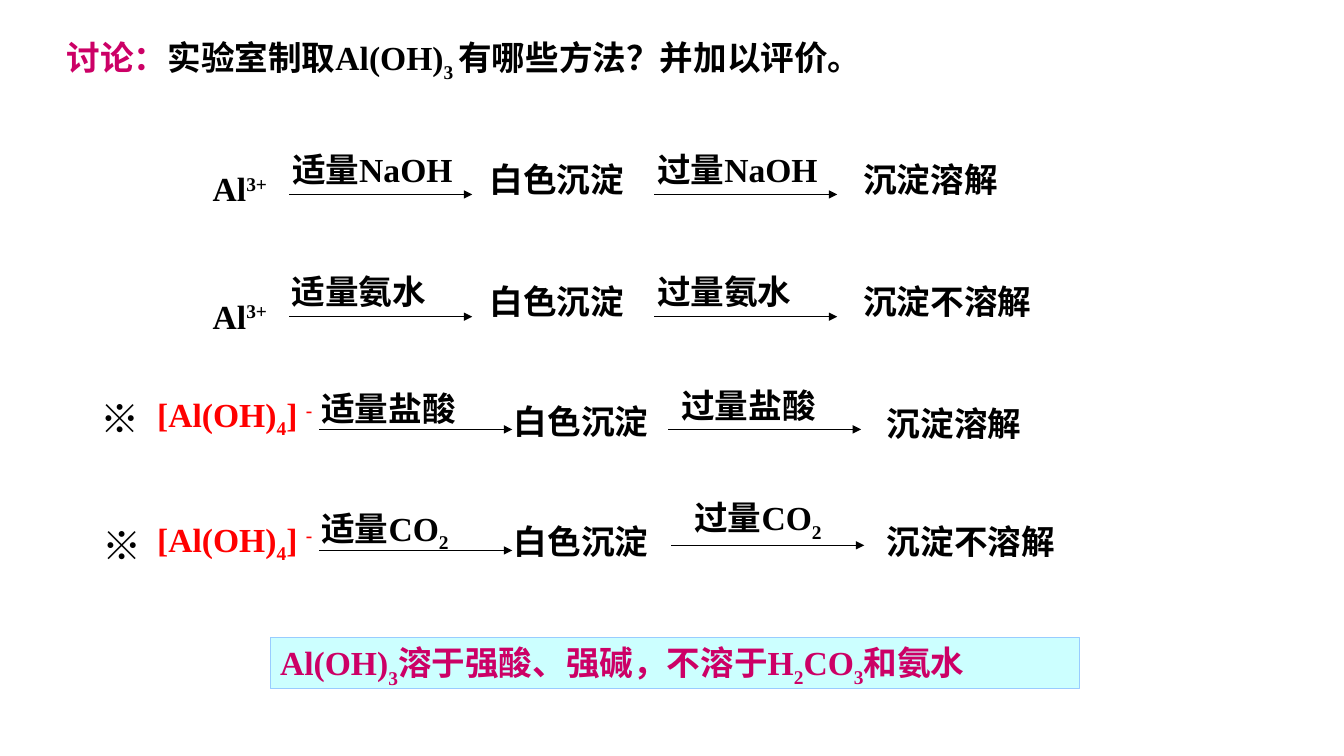
from dataclasses import dataclass
from typing import NamedTuple

from lxml import etree
from pptx import Presentation
from pptx.dml.color import RGBColor
from pptx.enum.shapes import MSO_CONNECTOR, MSO_SHAPE
from pptx.enum.text import MSO_ANCHOR, MSO_AUTO_SIZE, PP_ALIGN
from pptx.oxml.ns import qn
from pptx.util import Cm, Pt

STRAIGHT = MSO_CONNECTOR.STRAIGHT
RECTANGLE = MSO_SHAPE.RECTANGLE
LEFT = PP_ALIGN.LEFT
TOP = MSO_ANCHOR.TOP
NO_AUTOFIT = MSO_AUTO_SIZE.NONE


@dataclass(frozen=True)
class Theme:
    black: RGBColor = RGBColor(0, 0, 0)
    white: RGBColor = RGBColor(255, 255, 255)
    red: RGBColor = RGBColor(255, 0, 0)
    magenta: RGBColor = RGBColor(0xCC, 0, 0x66)
    pale_cyan: RGBColor = RGBColor(0xCC, 255, 255)
    sky: RGBColor = RGBColor(0x99, 0xCC, 255)
    latin: str = "Times New Roman"
    chinese: str = "Noto Sans CJK SC"
    body: Pt = Pt(24)
    mark: Pt = Pt(28)
    line: Pt = Pt(0.75)


THEME = Theme()


class Span(NamedTuple):
    text: str
    baseline: int = 0  # percent of the type size
    color: RGBColor = THEME.black


class Place(NamedTuple):
    """Left, top, width and height in centimetres."""
    left: float
    top: float
    width: float
    height: float = 1.27


@dataclass(frozen=True)
class Columns:
    """Horizontal measures shared by the reactions of one starting ion."""
    ion: list[Span]
    ion_x: float
    ion_width: float
    agent_width: float
    arrow_length: float
    middle_x: float
    middle_width: float
    result_x: float
    result_width: float


class Step(NamedTuple):
    agent: list[Span]
    agent_x: float
    agent_y: float
    arrow_x: float
    arrow_y: float


@dataclass(frozen=True)
class Reaction:
    columns: Columns
    ion_y: float
    steps: list[Step]
    middle_y: float
    result: str
    result_y: float


ALUMINIUM = Columns([Span("Al"), Span("3+", 30)],
                    5.11, 8.4, 6.6, 4.61, 12.09, 4.8, 21.51, 6.2)
ALUMINATE = Columns([Span("[Al(OH)", 0, THEME.red), Span("4", -25, THEME.red),
                     Span("] ", 0, THEME.red), Span("-", 30, THEME.red)],
                    3.71, 8.86, 6.96, 4.86, 12.7, 5.08, 22.1, 6.55)

REACTIONS = [
    Reaction(ALUMINIUM, 4.11, [
        Step([Span("适量NaOH")], 7.11, 3.63, 7.29, 4.9),
        Step([Span("过量NaOH")], 16.31, 3.63, 16.49, 4.9),
    ], 3.89, "沉淀溶解", 3.89),
    Reaction(ALUMINIUM, 7.32, [
        Step([Span("适量氨水")], 7.1, 6.71, 7.29, 7.98),
        Step([Span("过量氨水")], 16.31, 6.71, 16.49, 7.98),
    ], 6.96, "沉淀不溶解", 6.96),
    Reaction(ALUMINATE, 9.8, [
        Step([Span("适量盐酸")], 7.85, 9.65, 8.05, 10.82),
        Step([Span("过量盐酸")], 16.92, 9.58, 16.84, 10.82),
    ], 9.98, "沉淀溶解", 10.03),
    Reaction(ALUMINATE, 12.95, [
        Step([Span("适量CO"), Span("2", -25)], 7.85, 12.67, 8.05, 13.87),
        Step([Span("过量CO"), Span("2", -25)], 17.25, 12.4, 16.92, 13.74),
    ], 13.0, "沉淀不溶解", 13.0),
]

TITLE = [Span("讨论：", 0, THEME.magenta), Span("实验室制取Al(OH)"),
         Span("3 ", -25), Span("有哪些方法？并加以评价。")]
SUMMARY = [Span(text, baseline, THEME.magenta) for text, baseline in (
    ("Al(OH)", 0), ("3", -30), ("溶于强酸、强碱，不溶于H", 0), ("2", -25),
    ("CO", 0), ("3", -25), ("和氨水", 0))]
MARKS = [Place(2.29, 9.8, 2.46, 1.45), Place(2.34, 13.0, 2.46, 1.45)]


def write(shape, spans: list[Span], size=THEME.body, latin: str = THEME.latin,
          bold: bool = True) -> None:
    frame = shape.text_frame
    frame.word_wrap = True
    frame.auto_size = NO_AUTOFIT
    frame.vertical_anchor = TOP
    para = frame.paragraphs[0]
    para.alignment = LEFT
    for span in spans:
        run = para.add_run()
        run.text = span.text
        run.font.size = size
        run.font.bold = bold
        run.font.name = latin
        run.font.color.rgb = span.color
        properties = run.font._element
        if span.baseline:
            properties.set("baseline", str(span.baseline * 1000))
        east_asian = etree.Element(qn("a:ea"), typeface=THEME.chinese)
        properties.find(qn("a:latin")).addnext(east_asian)


def put(shape, place: Place) -> None:
    shape.left, shape.top, shape.width, shape.height = map(Cm, place)


def add_label(page, place: Place, spans: list[Span], **style) -> None:
    write(page.shapes.add_textbox(*map(Cm, place)), spans, **style)


def add_arrow(page, left: float, top: float, length: float) -> None:
    arrow = page.shapes.add_connector(
        STRAIGHT, Cm(left), Cm(top), Cm(left + length), Cm(top))
    arrow.line.color.rgb = THEME.black
    arrow.line.width = THEME.line
    etree.SubElement(arrow.line._get_or_add_ln(), qn("a:tailEnd"), type="triangle")
    etree.SubElement(arrow._element.spPr, qn("a:effectLst"))


def add_reaction(page, reaction: Reaction) -> None:
    columns = reaction.columns
    add_label(page, Place(columns.ion_x, reaction.ion_y, columns.ion_width),
              columns.ion)
    for step in reaction.steps:
        add_arrow(page, step.arrow_x, step.arrow_y, columns.arrow_length)
        add_label(page, Place(step.agent_x, step.agent_y, columns.agent_width),
                  step.agent)
    add_label(page, Place(columns.middle_x, reaction.middle_y, columns.middle_width),
              [Span("白色沉淀")])
    add_label(page, Place(columns.result_x, reaction.result_y, columns.result_width),
              [Span(reaction.result)])


def add_title(page) -> None:
    title = page.shapes.title
    put(title, Place(1.04, 0.81, 31.27))
    title.fill.solid()
    title.fill.fore_color.rgb = THEME.white
    write(title, TITLE)
    title.text_frame.margin_left = Cm(0.64)


def add_summary(page) -> None:
    box = page.shapes.add_shape(RECTANGLE, *map(Cm, Place(6.81, 16.06, 20.4, 1.3)))
    box.shadow.inherit = False
    box.fill.solid()
    box.fill.fore_color.rgb = THEME.pale_cyan
    box.line.color.rgb = THEME.sky
    box.line.width = THEME.line
    write(box, SUMMARY)


def main() -> None:
    deck = Presentation()
    deck.slide_width, deck.slide_height = Cm(33.87), Cm(19.05)
    page = deck.slides.add_slide(deck.slide_layouts[5])
    add_title(page)
    for reaction in REACTIONS:
        add_reaction(page, reaction)
    add_summary(page)
    # Reference marks beside the aluminate reactions
    for place in MARKS:
        add_label(page, place, [Span("※")], size=THEME.mark,
                  latin=THEME.chinese, bold=False)
    deck.save("out.pptx")


if __name__ == "__main__":
    main()
